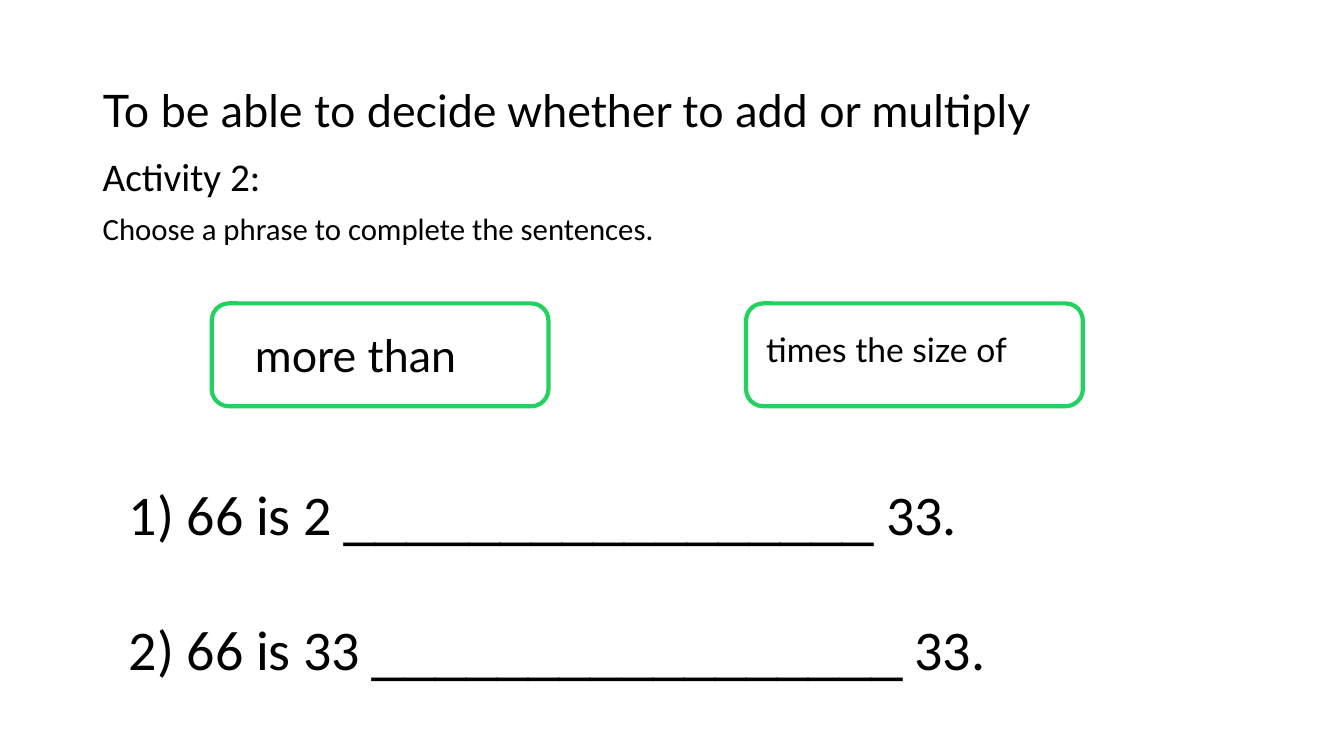
from lxml.etree import SubElement
from pptx import Presentation
from pptx.dml.color import RGBColor
from pptx.enum.shapes import MSO_SHAPE
from pptx.enum.text import MSO_ANCHOR, PP_ALIGN
from pptx.oxml.ns import qn
from pptx.util import Inches, Pt

COLOURS = {"ink": "000000", "frame": "23D160"}


class ActivitySlide:
    """Holds the style and the current slide."""

    def __init__(self, deck):
        self.page = deck.slides.add_slide(deck.slide_layouts[5])

    def add_box(self, left, top, width, height):
        """Add a wrapping text box and return its text frame."""
        box = self.page.shapes.add_textbox(
            Inches(left), Inches(top), Inches(width), Inches(height))
        box.text_frame.word_wrap = True
        return box.text_frame

    def add_span(self, para, text, size, font):
        """Add one run of text to a paragraph."""
        span = para.add_run()
        span.text = text
        span.font.size = Pt(size)
        span.font.name = font
        span.font.color.rgb = RGBColor.from_string(COLOURS["ink"])

    def add_title(self, text):
        """Move and fill the title placeholder."""
        box = self.page.shapes.title
        box.left, box.top = Inches(0.92), Inches(0.4)
        box.width, box.height = Inches(9.6), Inches(1.45)
        box.text_frame.vertical_anchor = MSO_ANCHOR.MIDDLE
        para = box.text_frame.paragraphs[0]
        para.alignment = PP_ALIGN.LEFT
        para.line_spacing = 0.9
        self.add_span(para, text, 32, "Lato")

    def add_instructions(self, heading, task):
        """Add the activity heading and the task below it."""
        frame = self.add_box(0.92, 1.51, 11.7, 1.12)
        first, second = frame.paragraphs[0], frame.add_paragraph()
        second.space_before = Pt(10)
        for para, text, size in ((first, heading, 28), (second, task, 22)):
            para.line_spacing = 0.9
            self.add_span(para, text, size, "Calibri")

    def add_phrase(self, left, text, size, text_left, text_top):
        """Add a phrase in a rounded frame."""
        frame = self.page.shapes.add_shape(
            MSO_SHAPE.ROUNDED_RECTANGLE,
            Inches(left), Inches(3.01), Inches(3.34), Inches(1.02))
        frame.shadow.inherit = False
        frame.fill.background()
        frame.line.color.rgb = RGBColor.from_string(COLOURS["frame"])
        frame.line.width = Pt(3)
        label = self.add_box(text_left, text_top, left + 3.34 - text_left, 0.6)
        self.add_span(label.paragraphs[0], text, size, "Lato")

    def add_questions(self, starts):
        """Add the numbered sentences with a gap to fill in."""
        frame = self.add_box(1.18, 4.71, 9.41, 2.12)
        for index, start in enumerate(starts):
            para = frame.add_paragraph() if index else frame.paragraphs[0]
            if index:
                para.space_before = Pt(48)
            props = para._p.get_or_add_pPr()
            props.set("marL", str(Inches(0.38)))
            props.set("indent", str(-Inches(0.38)))
            SubElement(props, qn("a:buFont"), typeface="+mj-lt")
            SubElement(props, qn("a:buAutoNum"), type="arabicParenR")
            self.add_span(para, f" {start} ", 40, "Calibri")
            self.add_span(para, "_" * 17, 40, "Arial")
            self.add_span(para, " 33.", 40, "Calibri")


def main():
    """Build and save the deck."""
    deck = Presentation()
    deck.slide_width, deck.slide_height = Inches(13.33), Inches(7.5)
    activity = ActivitySlide(deck)
    activity.add_title("To be able to decide whether to add or multiply")
    activity.add_instructions(
        "Activity 2:", "Choose a phrase to complete the sentences.")
    activity.add_phrase(2.1, "more than", 32, 2.43, 3.2)
    activity.add_phrase(7.4, "times the size of", 24, 7.5, 3.21)
    activity.add_questions(["66 is 2", "66 is 33"])
    deck.save("out.pptx")


if __name__ == "__main__":
    main()
